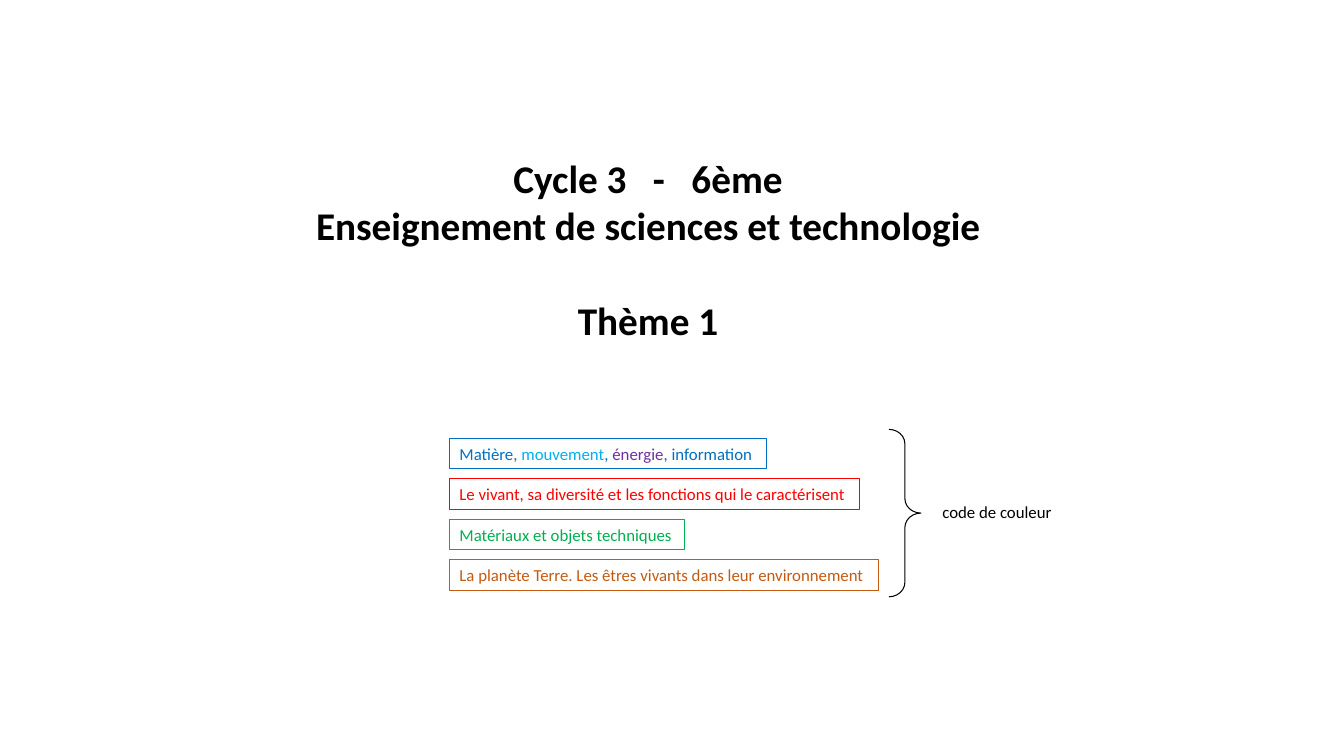
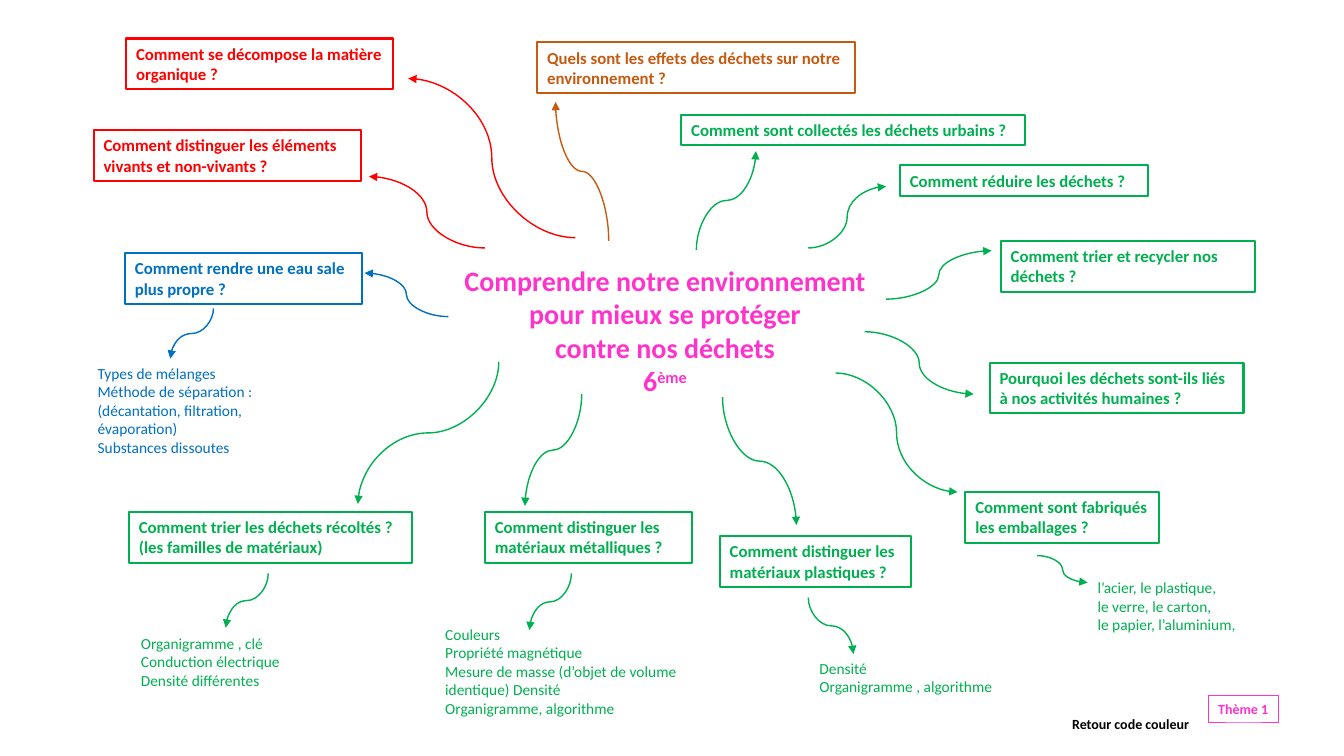
"""Build a title slide with its colour key, and a mind map about waste."""
from lxml.etree import SubElement
from pptx import Presentation
from pptx.dml.color import RGBColor
from pptx.enum.shapes import MSO_CONNECTOR, MSO_SHAPE
from pptx.enum.text import MSO_ANCHOR, MSO_AUTO_SIZE, PP_ALIGN
from pptx.oxml.ns import qn
from pptx.util import Cm, Pt

BLACK, BLUE, SKY, PURPLE = "000000", "0070C0", "00B0F0", "7030A0"
RED, GREEN, BROWN, PINK = "FF0000", "00B050", "C55A11", "FF33CC"
TITLE_ONLY = 5
ONE_LINE, TWO_LINES = 0.76, 1.28

COVER_TITLE = [
    [("Cycle 3", {}), (" -", {"spc": 1260}), (" 6ème", {})],
    "Enseignement de sciences et technologie",
    "Thème 1",
]
COLOUR_KEY = [
    (7.98, BLUE, [("Matière, ", {}), ("mouvement", {"color": SKY}), (", ", {}),
                  ("énergie", {"color": PURPLE}), (", information", {})]),
    (10.34, RED, "Le vivant, sa diversité et les fonctions qui le caractérisent"),
    (5.92, GREEN, "Matériaux et objets techniques"),
    (10.8, BROWN, "La planète Terre. Les êtres vivants dans leur environnement"),
]
KEY_LEFT, KEY_TOP, KEY_STEP = 11.33, 11.05, 1.02

MAP_TITLE = [
    "Comprendre notre environnement",
    "pour mieux se protéger",
    "contre nos déchets",
    [("6", {}), ("ème", {"baseline": 30000})],
]
QUESTIONS = [
    (3.18, 0.97, 6.73, TWO_LINES, RED, ["Comment se décompose la matière organique ?"]),
    (2.36, 3.28, 6.73, TWO_LINES, RED,
     ["Comment distinguer les éléments vivants et non-vivants ?"]),
    (3.15, 6.38, 5.97, TWO_LINES, BLUE, ["Comment rendre une eau sale plus propre ?"]),
    (13.54, 1.07, 8, TWO_LINES, BROWN,
     ["Quels sont les effets des déchets sur notre environnement ?"]),
    (17.17, 2.9, 8.66, ONE_LINE, GREEN, ["Comment sont collectés les déchets urbains ?"]),
    (22.68, 4.17, 6.25, ONE_LINE, GREEN, ["Comment réduire les déchets ?"]),
    (25.22, 6.07, 6.4, TWO_LINES, GREEN, ["Comment trier et recycler nos déchets ?"]),
    (24.94, 9.14, 6.4, TWO_LINES, GREEN,
     ["Pourquoi les déchets sont-ils liés à nos activités humaines ?"]),
    (24.33, 12.4, 4.88, TWO_LINES, GREEN, ["Comment sont fabriqués les emballages ?"]),
    (18.14, 13.51, 4.83, TWO_LINES, GREEN,
     ["Comment distinguer les matériaux plastiques ?"]),
    (12.22, 12.9, 5.23, TWO_LINES, GREEN,
     ["Comment distinguer les matériaux métalliques ?"]),
    (3.25, 12.9, 7.14, TWO_LINES, GREEN,
     ["Comment trier les déchets récoltés ?", "(les familles de matériaux)"]),
]
NOTES = [
    (2.21, 9.04, 4.57, 2.62, BLUE,
     ["Types de mélanges", "Méthode de séparation :",
      "(décantation, filtration, évaporation)", "Substances dissoutes"]),
    (3.3, 15.85, 5.99, 1.68, GREEN,
     ["Organigramme , clé", "Conduction électrique", "Densité différentes"]),
    (10.97, 15.62, 6.43, 2.62, GREEN,
     ["Couleurs", "Propriété magnétique",
      "Mesure de masse (d’objet de volume identique) Densité",
      "Organigramme, algorithme"]),
    (20.4, 16.48, 5.05, 1.19, GREEN, ["Densité", "Organigramme , algorithme"]),
    (27.41, 14.45, 4.22, 1.68, GREEN,
     ["l’acier, le plastique,", "le verre, le carton,", "le papier, l’aluminium,"]),
]
SIDEWAYS_ARROWS = [
    (14.5, 5.99, 10.29, 1.98, RED),
    (12.22, 6.25, 9.3, 4.45, RED),
    (11.3, 7.98, 9.19, 6.88, BLUE),
    (20.37, 6.25, 22.33, 4.7, GREEN),
    (22.33, 7.54, 24.99, 6.32, GREEN),
    (21.79, 8.36, 24.54, 9.93, GREEN),
    (21.06, 9.4, 24.13, 12.4, GREEN),
    (26.14, 14, 27.41, 14.68, GREEN),
]
UPRIGHT_ARROWS = [
    (15.34, 6.07, 14, 2.57, BROWN),
    (17.55, 6.3, 19.05, 3.81, GREEN),
    (5.38, 7.77, 4.29, 9.04, BLUE),
    (12.57, 9.12, 9.02, 12.7, GREEN),
    (14.66, 9.93, 13.23, 12.75, GREEN),
    (18.21, 10.01, 20.07, 13.23, GREEN),
    (6.76, 14.45, 5.69, 15.82, GREEN),
    (14.4, 14.45, 13.34, 15.88, GREEN),
    (20.37, 15.06, 21.51, 16.48, GREEN),
]


def rgb(color):
    return RGBColor.from_string(color)


def write(shape, paragraphs, color, size, bold=False, wrap=True, align=PP_ALIGN.LEFT):
    frame = shape.text_frame
    frame_format = {"word_wrap": wrap, "auto_size": MSO_AUTO_SIZE.NONE,
                    "vertical_anchor": MSO_ANCHOR.TOP}
    for name, value in frame_format.items():
        setattr(frame, name, value)
    for index, content in enumerate(paragraphs):
        paragraph = frame.add_paragraph() if index else frame.paragraphs[0]
        paragraph.alignment = align
        runs = [(content, {})] if isinstance(content, str) else content
        for text, changes in runs:
            run = paragraph.add_run()
            run.text = text
            font_format = {"name": "Calibri", "size": Pt(size), "bold": bold}
            for name, value in font_format.items():
                setattr(run.font, name, value)
            run.font.color.rgb = rgb(changes.get("color", color))
            for name in ("spc", "baseline"):
                if name in changes:
                    run._r.get_or_add_rPr().set(name, str(changes[name]))


def add_text(slide, box, paragraphs, color, size, border=0, **text_format):
    shape = slide.shapes.add_textbox(*map(Cm, box))
    if border:
        shape.line.color.rgb = rgb(color)
        shape.line.width = Pt(border)
    write(shape, paragraphs, color, size, **text_format)


def add_titled_slide(presentation, box, paragraphs, color, size):
    slide = presentation.slides.add_slide(presentation.slide_layouts[TITLE_ONLY])
    title = slide.shapes.title
    for name, value in zip(("left", "top", "width", "height"), box):
        setattr(title, name, Cm(value))
    write(title, paragraphs, color, size, bold=True, wrap=False, align=PP_ALIGN.CENTER)
    return slide


def add_arrow(slide, x1, y1, x2, y2, color, upright=False):
    ends, angle = (x1, y1, x2, y2), 0
    if upright:
        across, down = x2 - x1, y2 - y1
        turn = 1 if across * down < 0 else -1
        angle = 90 if turn == 1 else 270
        middle_x, middle_y = (x1 + x2) / 2, (y1 + y2) / 2
        half_x, half_y = turn * down / 2, -turn * across / 2
        ends = (middle_x - half_x, middle_y - half_y,
                middle_x + half_x, middle_y + half_y)
    arrow = slide.shapes.add_connector(MSO_CONNECTOR.CURVE, *map(Cm, ends))
    arrow.line.color.rgb = rgb(color)
    arrow.line.width = Pt(1)
    properties = arrow._element.spPr
    if angle:
        properties.find(qn("a:xfrm")).set("rot", str(angle * 60000))
    SubElement(properties.find(qn("a:ln")), qn("a:tailEnd"), type="triangle")
    SubElement(properties, qn("a:effectLst"))


def build_cover(presentation):
    slide = add_titled_slide(presentation, (7.62, 3.76, 17.42, 5.05),
                             COVER_TITLE, BLACK, 28)
    slide.shapes.title.text_frame.paragraphs[-1].space_before = Pt(34)
    for row, (width, color, content) in enumerate(COLOUR_KEY):
        box = (KEY_LEFT, KEY_TOP + row * KEY_STEP, width, ONE_LINE)
        add_text(slide, box, [content], color, 12, border=0.75, wrap=False)
    brace = slide.shapes.add_shape(MSO_SHAPE.RIGHT_BRACE,
                                   *map(Cm, (22.4, 10.82, 0.81, 4.22)))
    brace.adjustments[0] = 0.45
    brace.shadow.inherit = False
    brace.fill.background()
    brace.line.color.rgb = rgb(BLACK)
    brace.line.width = Pt(0.75)
    add_text(slide, (23.5, 12.52, 3.3, ONE_LINE), ["code de couleur"], BLACK, 12,
             wrap=False)


def build_map(presentation):
    slide = add_titled_slide(presentation, (11.4, 6.5, 10.72, 3.68),
                             MAP_TITLE, PINK, 20)
    for *box, color, paragraphs in QUESTIONS:
        add_text(slide, box, paragraphs, color, 12, border=1.5, bold=True)
    for *box, color, paragraphs in NOTES:
        add_text(slide, box, paragraphs, color, 11)
    for arrow in SIDEWAYS_ARROWS:
        add_arrow(slide, *arrow)
    for arrow in UPRIGHT_ARROWS:
        add_arrow(slide, *arrow, upright=True)
    add_text(slide, (30.45, 17.53, 1.78, 0.69), ["Thème 1"], PINK, 10,
             border=0.75, bold=True, wrap=False)
    add_text(slide, (26.77, 17.91, 3.51, 0.69), ["Retour code couleur"], BLACK, 10,
             bold=True, wrap=False)


def main():
    presentation = Presentation()
    presentation.slide_width, presentation.slide_height = Cm(33.87), Cm(19.05)
    build_cover(presentation)
    build_map(presentation)
    presentation.save("out.pptx")


if __name__ == "__main__":
    main()
